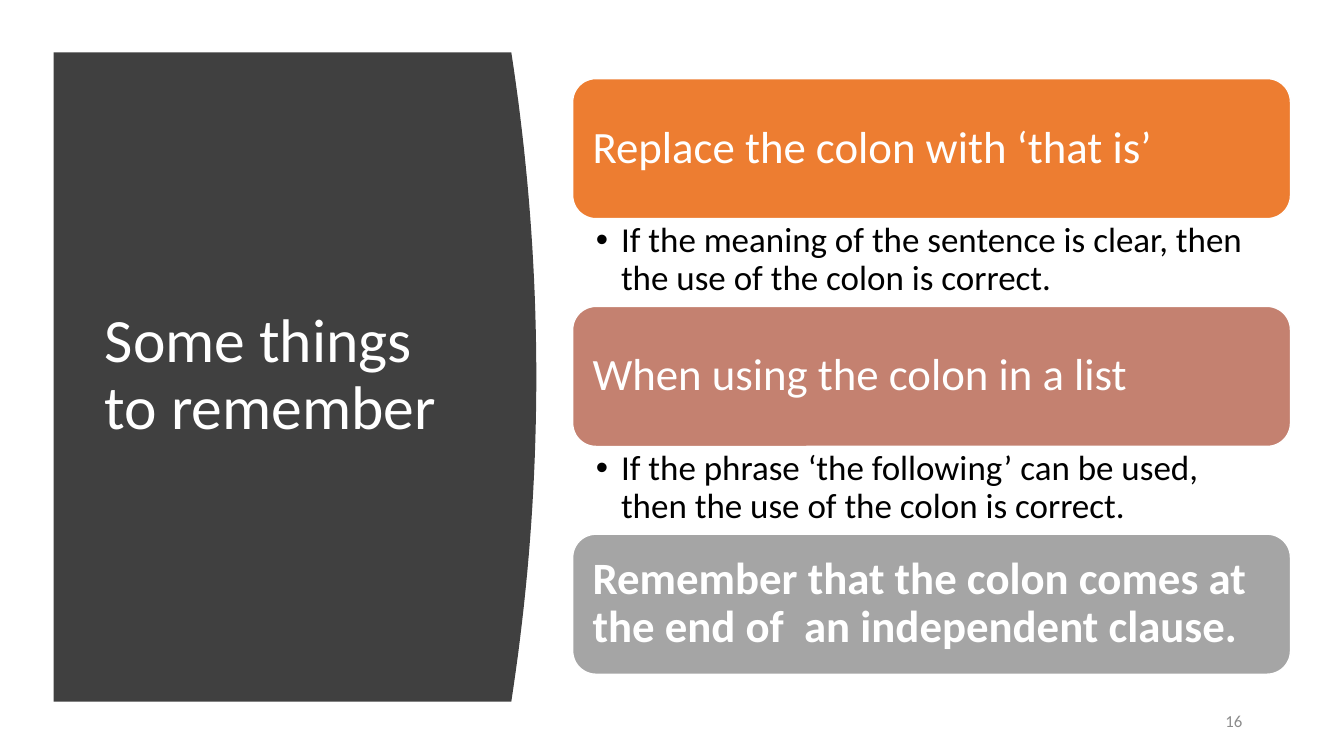
from dataclasses import dataclass

from lxml.etree import SubElement
from pptx import Presentation
from pptx.dml.color import RGBColor as Rgb
from pptx.enum.shapes import MSO_SHAPE as Kind
from pptx.enum.text import MSO_ANCHOR as Anchor, MSO_AUTO_SIZE as Fit, PP_ALIGN as Align
from pptx.oxml.ns import qn
from pptx.util import Inches, Pt


@dataclass(frozen=True)
class Theme:
    font: str = "Calibri"
    white: str = "FFFFFF"
    black: str = "000000"
    panel: str = "404040"
    muted: str = "8C8C8C"
    cards: tuple = ("ED7D31", "C48170", "A5A5A5")
    title: int = 44
    head: int = 32
    body: int = 25
    small: int = 12


def apply(item, values):
    for name, value in values.items():
        setattr(item, name, value)


class Deck:
    def __init__(self, theme):
        self.theme = theme
        self.prs = Presentation()
        apply(self.prs, {"slide_width": Inches(13.33), "slide_height": Inches(7.5)})
        self.slide = self.prs.slides.add_slide(self.prs.slide_layouts[3])
        self.shapes = self.slide.shapes

    def x(self, share):
        return round(self.prs.slide_width * share / 100)

    def y(self, share):
        return round(self.prs.slide_height * share / 100)

    def box(self, left, top, width, height):
        return self.x(left), self.y(top), self.x(width), self.y(height)

    def place(self, shape, box):
        apply(shape, dict(zip(("left", "top", "width", "height"), self.box(*box))))

    def fill(self, shape, color):
        shape.shadow.inherit = False
        shape.fill.solid()
        shape.fill.fore_color.rgb = Rgb.from_string(color)

    def label(self, shape, text, size, color, bold=False, align=Align.LEFT,
              anchor=Anchor.MIDDLE, inset=(0.1, 0.05, 0.1, 0.05), after=0, line=0.9):
        frame = shape.text_frame
        frame.text = text
        sides = ("margin_left", "margin_top", "margin_right", "margin_bottom")
        apply(frame, {"word_wrap": True, "auto_size": Fit.NONE, "vertical_anchor": anchor})
        apply(frame, dict(zip(sides, map(Inches, inset))))
        para = frame.paragraphs[0]
        apply(para, {"alignment": align, "line_spacing": line,
                     "space_before": Pt(0), "space_after": Pt(after)})
        font = para.runs[0].font
        apply(font, {"name": self.theme.font, "size": Pt(size), "bold": bold})
        font.color.rgb = Rgb.from_string(color)
        return para

    def panel(self, left, top, edge, bulge, base, steps=40):
        mid, half = (top + base) / 2, (base - top) / 2
        turns = [2 * i / steps - 1 for i in range(steps + 1)]
        curve = [(self.x(edge + bulge * (1 - t * t)), self.y(mid + half * t)) for t in turns]
        form = self.shapes.build_freeform(self.x(left), self.y(top))
        form.add_line_segments(curve + [(self.x(left), self.y(base))], close=True)
        shape = form.convert_to_shape()
        self.fill(shape, self.theme.panel)
        shape.line.fill.background()
        self.shapes.element.insert(2, shape.element)

    def title(self, text, box):
        shape = self.shapes.title
        self.place(shape, box)
        self.label(shape, text, self.theme.title, self.theme.white)

    def card(self, text, color, box, bold):
        shape = self.shapes.add_shape(Kind.ROUNDED_RECTANGLE, *self.box(*box))
        self.fill(shape, color)
        shape.line.color.rgb = Rgb.from_string(self.theme.white)
        shape.line.width = Pt(1)
        self.label(shape, text, self.theme.head, self.theme.white, bold=bold,
                   inset=(0.13,) * 4, after=11)

    def bullet(self, slot, text, box):
        shape = self.slide.placeholders[slot]
        self.place(shape, box)
        para = self.label(shape, text, self.theme.body, self.theme.black,
                          anchor=Anchor.TOP, inset=(0.23, 0.04, 0.25, 0.04), after=5)
        props = para._p.get_or_add_pPr()
        for name, value in {"marL": 0.25, "indent": -0.25}.items():
            props.set(name, str(Inches(value)))
        SubElement(props, qn("a:buFont"), typeface="Arial")
        SubElement(props, qn("a:buChar"), char="•")

    def number(self, text, box):
        shape = self.shapes.add_textbox(*self.box(*box))
        self.label(shape, text, self.theme.small, self.theme.muted,
                   align=Align.RIGHT, after=6, line=1.0)


def main():
    theme = Theme()
    deck = Deck(theme)
    deck.panel(left=4, top=6.93, edge=38.05, bulge=1.86, base=92.8)
    deck.title("Some things to remember", (7.05, 14.8, 28, 69.87))

    left, top, width, tall, note = 42.61, 10.4, 53.41, 18.53, 11.6
    items = (
        ("Replace the colon with ‘that is’",
         "If the meaning of the sentence is clear, then the use of the colon is correct."),
        ("When using the colon in a list",
         "If the phrase ‘the following’ can be used, then the use of the colon is correct."),
        ("Remember that the colon comes at the end of  an independent clause.", None),
    )
    for i, ((head, text), color) in enumerate(zip(items, theme.cards)):
        row = top + i * (tall + note)
        deck.card(head, color, (left, row, width, tall), bold=text is None)
        if text:
            deck.bullet(i + 1, text, (left, row + tall, width, note))

    deck.number("16", (88, 92.67, 5.18, 5.33))
    deck.prs.save("out.pptx")


if __name__ == "__main__":
    main()
